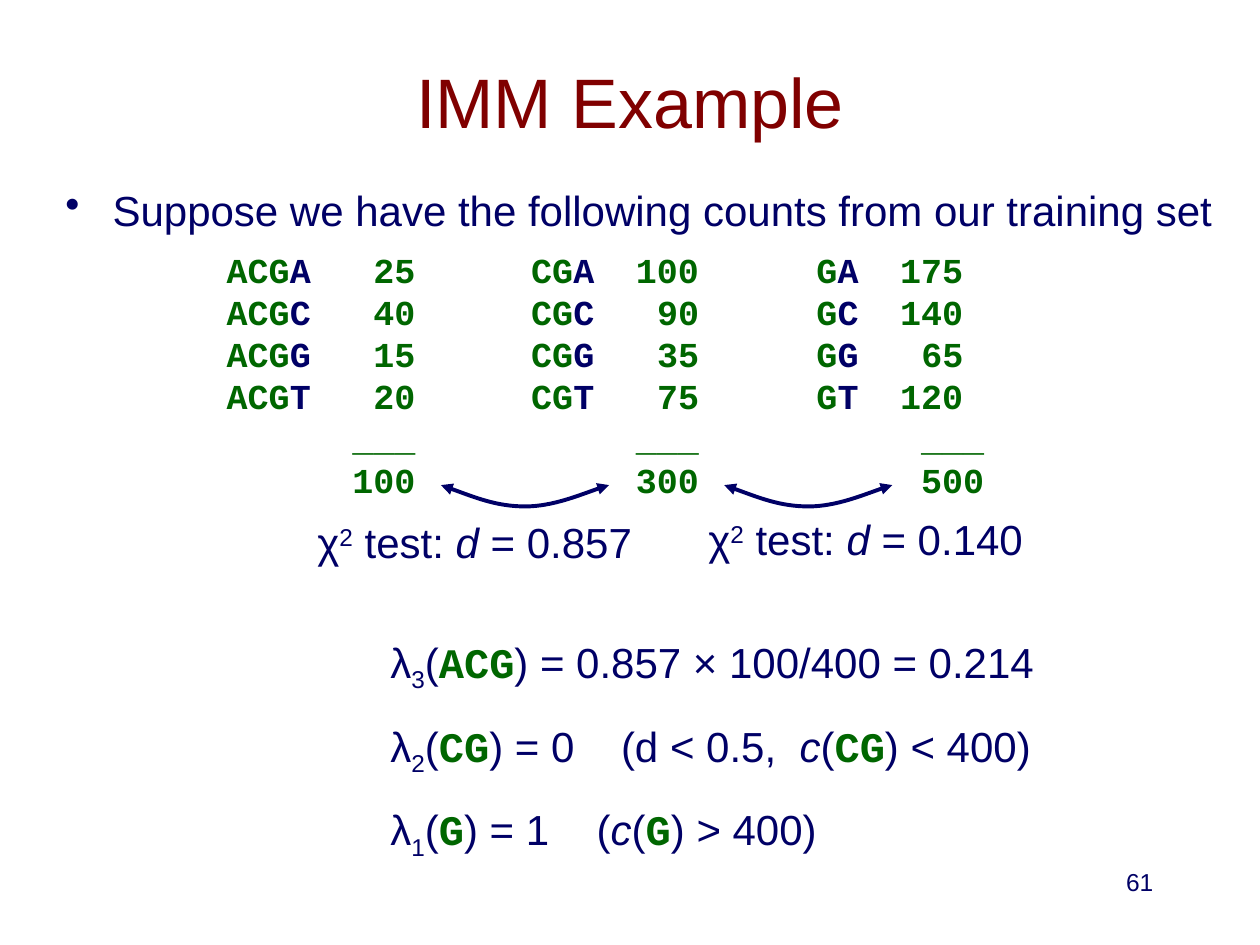
from lxml import etree
from pptx import Presentation
from pptx.dml.color import RGBColor
from pptx.enum.text import MSO_ANCHOR, PP_ALIGN
from pptx.oxml.ns import qn
from pptx.util import Cm, Pt

MAROON = RGBColor(0x80, 0x00, 0x00)
NAVY = RGBColor(0x00, 0x00, 0x66)
GREEN = RGBColor(0x00, 0x66, 0x00)
SANS, MONO = "Arial", "Courier New"
LEFT, CENTER, RIGHT = PP_ALIGN.LEFT, PP_ALIGN.CENTER, PP_ALIGN.RIGHT
TOP, MIDDLE = MSO_ANCHOR.TOP, MSO_ANCHOR.MIDDLE
CHAR_WIDTH = 0.423  # one 20 pt Courier New letter, in cm

# Context counts: (left in cm, context, counts of the next base, total)
COUNTS = [
    (4.32, "ACG", (25, 40, 15, 20), 100),
    (10.46, "CG", (100, 90, 35, 75), 300),
    (16.21, "G", (175, 140, 65, 120), 500),
]


def add_box(slide, left, top, width, height, anchor=TOP):
    frame = slide.shapes.add_textbox(Cm(left), Cm(top), Cm(width), Cm(height)).text_frame
    frame.word_wrap = True
    frame.vertical_anchor = anchor
    return frame


def set_tabs(paragraph, stops):
    """Add tab stops given as (position in cm, alignment) pairs."""
    tab_list = etree.SubElement(paragraph._p.get_or_add_pPr(), qn("a:tabLst"))
    for position, align in stops:
        etree.SubElement(tab_list, qn("a:tab"), pos=str(Cm(position)), algn=align)


def set_font(paragraph, size, name=None, color=None, bold=None):
    font = paragraph.font
    font.size = Pt(size)
    if name:
        font.name = name
    if color is not None:
        font.color.rgb = color
    font.bold = bold


def add_run(paragraph, text, color=None, name=None, bold=None, italic=None, baseline=None):
    run = paragraph.add_run()
    run.text = text
    run.font.bold, run.font.italic = bold, italic
    if color is not None:
        run.font.color.rgb = color
    if name:
        run.font.name = name
    if baseline:
        run.font._element.set("baseline", str(baseline * 1000))


def add_line(slide, text, left, top, width, height, size, color, align, anchor=TOP):
    paragraph = add_box(slide, left, top, width, height, anchor).paragraphs[0]
    paragraph.alignment = align
    set_font(paragraph, size, SANS, color)
    add_run(paragraph, text)
    return paragraph


def add_bullet(slide, text, left, top, width, height):
    paragraph = add_line(slide, text, left, top, width, height, 24, NAVY, LEFT)
    paragraph.space_before = Pt(4.8)
    properties = paragraph._p.get_or_add_pPr()
    properties.set("marL", str(Cm(0.95)))
    properties.set("indent", str(-Cm(0.95)))
    bullet = etree.Element(qn("a:buChar"), char="•")
    properties.insert_element_before(bullet, "a:tabLst", "a:defRPr")


def add_counts(slide, left, top, context, counts, total):
    frame = add_box(slide, left, top, 4.32, 5.33)
    count_end = (len(context) + 6) * CHAR_WIDTH
    total_end = max(count_end, 8 * CHAR_WIDTH)

    def add_row(label, base, value, end):
        first = frame.paragraphs[0]
        paragraph = frame.add_paragraph() if first.runs else first
        set_tabs(paragraph, [(end, "r")])
        set_font(paragraph, 20, MONO, bold=True)
        if base:
            add_run(paragraph, label, GREEN, MONO, True)
            add_run(paragraph, base, NAVY, MONO, True)
        add_run(paragraph, f"\t{value}", GREEN, MONO, True)

    for base, count in zip("ACGT", counts):
        add_row(context, base, count, count_end)
    # Sum line and total
    for value in ("___", total):
        add_row("", "", value, total_end)


def add_curved_arrow(slide, left, top):
    """Draw a sagging curve, 3.39 x 0.43 cm, with a head at each end."""
    points = [(0.56, 0.2), (1.12, 0.43), (1.7, 0.43), (2.26, 0.43), (3.1, 0.08), (3.39, 0)]
    builder = slide.shapes.build_freeform(Cm(left), Cm(top))
    builder.add_line_segments([(Cm(left + x), Cm(top + y)) for x, y in points], close=False)
    arrow = builder.convert_to_shape()
    arrow.shadow.inherit = False
    arrow.fill.background()
    arrow.line.color.rgb = NAVY
    arrow.line.width = Pt(2.25)
    # Each three segments become one Bezier curve
    segments = arrow._element.xpath(".//a:lnTo")
    outline = segments[0].getparent()
    for start in range(0, len(segments), 3):
        curve = etree.SubElement(outline, qn("a:cubicBezTo"))
        for segment in segments[start:start + 3]:
            curve.append(segment[0])
            outline.remove(segment)
    for end in ("a:headEnd", "a:tailEnd"):
        etree.SubElement(arrow.line._get_or_add_ln(), qn(end), type="triangle")


def add_chi_test(slide, left, top, value):
    paragraph = add_box(slide, left, top, 7.14, 1.27).paragraphs[0]
    set_font(paragraph, 24, SANS, NAVY)
    add_run(paragraph, "χ")
    add_run(paragraph, "2", baseline=30)
    add_run(paragraph, " test: ")
    add_run(paragraph, "d", italic=True)
    add_run(paragraph, f" = {value}")


def add_lambda(slide, left, top, context, parts, stops=()):
    """Write one weight; parts are (text, kind) with kind text, var or seq."""
    paragraph = add_box(slide, left, top, 14.2, 1.27).paragraphs[0]
    set_tabs(paragraph, [(stop, "l") for stop in stops])
    set_font(paragraph, 24)
    add_run(paragraph, "λ", NAVY, SANS)
    add_run(paragraph, str(len(context)), NAVY, SANS, baseline=-25)
    for text, kind in [("(", "text"), (context, "seq"), *parts]:
        if kind == "seq":
            add_run(paragraph, text, GREEN, MONO, bold=True)
        else:
            add_run(paragraph, text, NAVY, SANS, italic=kind == "var")


def main():
    deck = Presentation()
    deck.slide_width, deck.slide_height = Cm(25.4), Cm(19.05)
    slide = deck.slides.add_slide(deck.slide_layouts[6])

    # Title and introduction
    add_line(slide, "IMM Example", 1.9, 0.43, 21.6, 3.18, 40, MAROON, CENTER, MIDDLE)
    add_bullet(slide, "Suppose we have the following counts from our training set",
               1.07, 3.6, 23.7, 1.5)

    # Counts, one block per context length
    for left, context, counts, total in COUNTS:
        add_counts(slide, left, 4.88, context, counts, total)

    # Tests between neighbouring totals
    for arrow_left, test_left, test_top, value in [
        (8.89, 6.15, 10.29, "0.857"), (14.6, 14.03, 10.23, "0.140"),
    ]:
        add_curved_arrow(slide, arrow_left, 9.78)
        add_chi_test(slide, test_left, test_top, value)

    # Resulting weights
    weights = [
        ("ACG", [(") = 0.857 × 100/400 = 0.214", "text")], ()),
        ("CG", [(") = 0\t(d < 0.5,\t", "text"), ("c", "var"), ("(", "text"),
                ("CG", "seq"), (") < 400)", "text")], (4.65, 8.25)),
        ("G", [(") = 1\t(", "text"), ("c", "var"), ("(", "text"),
               ("G", "seq"), (") > 400)", "text")], (4.16,)),
    ]
    for row, (context, parts, stops) in enumerate(weights):
        add_lambda(slide, 7.62, 12.7 + 1.69 * row, context, parts, stops)

    # Slide number
    add_line(slide, "61", 18.2, 17.35, 5.3, 1.27, 14, NAVY, RIGHT)

    deck.save("out.pptx")


if __name__ == "__main__":
    main()
